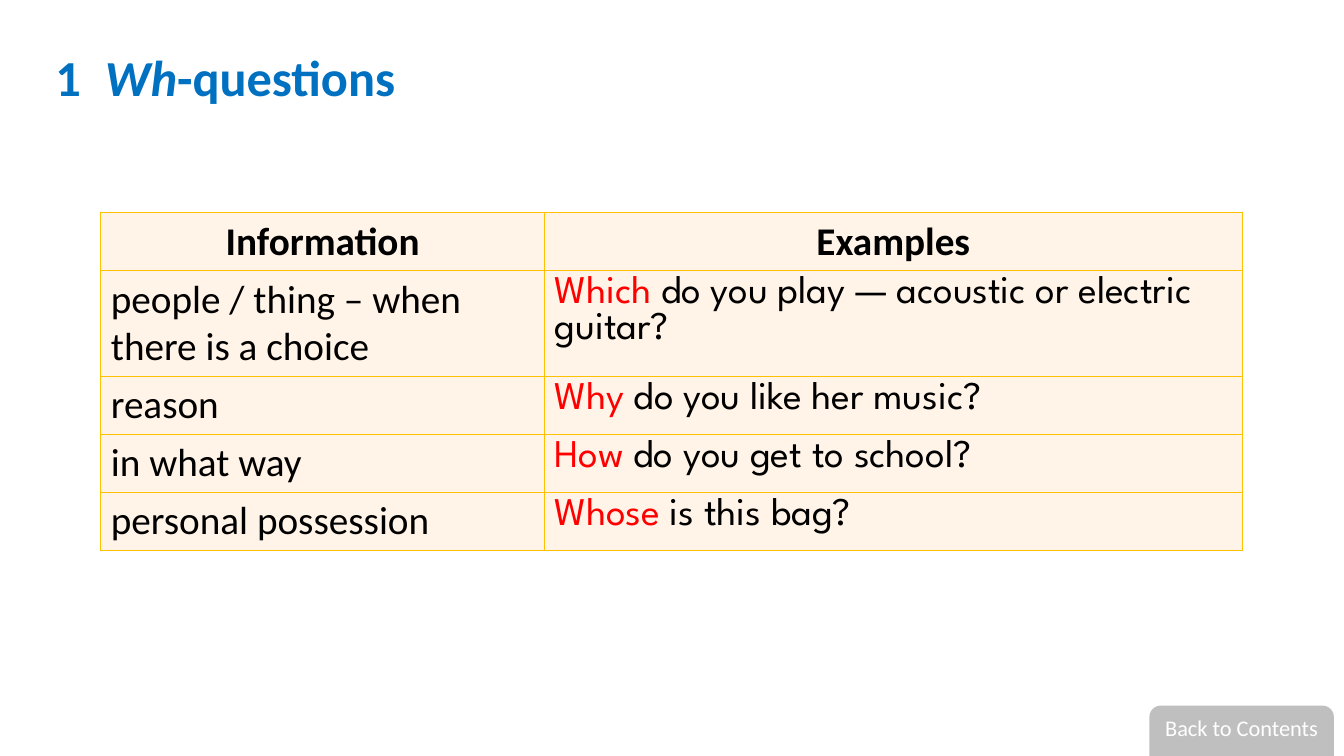
from typing import NamedTuple

from lxml import etree
from pptx import Presentation
from pptx.dml.color import RGBColor
from pptx.enum.shapes import MSO_SHAPE
from pptx.enum.text import MSO_ANCHOR, PP_ALIGN
from pptx.oxml.ns import qn
from pptx.util import Inches, Pt

ROUNDED = MSO_SHAPE.ROUNDED_RECTANGLE
TOP, MIDDLE = MSO_ANCHOR.TOP, MSO_ANCHOR.MIDDLE
LEFT, CENTER = PP_ALIGN.LEFT, PP_ALIGN.CENTER

COLORS = {
    "title": "0070C0",
    "text": "000000",
    "question": "FF0000",
    "cell": "FFF4E7",
    "border": "FFC000",
    "button": "BFBFBF",
    "white": "FFFFFF",
}
BODY_FONT, EXAMPLE_FONT = "Calibri", "League Spartan"
GRID_COLS, GRID_ROWS = 133.3, 75
CELL = Inches(0.1)


class Box(NamedTuple):
    col: float
    row: float
    cols: float
    rows: float


class Question(NamedTuple):
    information: str
    word: str
    rest: str
    rows: float = 5.75


TITLE_BOX = Box(5.5, 5, 117.7, 6.3)
TABLE_BOX = Box(10, 21.1, 113.2, 33.5)
BUTTON_BOX = Box(114, 70, 18.3, 6.8)
TABLE_COLS = (44, 69.2)
HEADER_ROWS = 5.75
HEADERS = ("Information", "Examples")
QUESTIONS = (
    Question("people / thing – when there is a choice", "Which",
             " do you play — acoustic or electric guitar?", 10.5),
    Question("reason", "Why", " do you like her music?"),
    Question("in what way", "How", " do you get to school?"),
    Question("personal possession", "Whose", " is this bag?"),
)


def grid(n: float) -> int:
    return round(n * CELL)


def place(box: Box) -> list[int]:
    return [grid(n) for n in box]


def color(name: str) -> RGBColor:
    return RGBColor.from_string(COLORS[name])


def add_text(p, text: str, *, size: float = 28, font: str = BODY_FONT,
             fill: str = "text", bold: bool = False, italic: bool = False,
             align=LEFT) -> None:
    p.alignment = align
    r = p.add_run()
    r.text = text
    r.font.size = Pt(size)
    r.font.name = font
    r.font.bold = bold
    r.font.italic = italic
    r.font.color.rgb = color(fill)


def format_cell(cell, anchor=TOP) -> None:
    tcPr = cell._tc.get_or_add_tcPr()
    for side in ("lnL", "lnR", "lnT", "lnB"):
        ln = etree.SubElement(tcPr, qn(f"a:{side}"), w=str(Pt(1)))
        line_fill = etree.SubElement(ln, qn("a:solidFill"))
        etree.SubElement(line_fill, qn("a:srgbClr"), val=COLORS["border"])
    cell.fill.solid()
    cell.fill.fore_color.rgb = color("cell")
    cell.vertical_anchor = anchor


def add_title(s) -> None:
    tf = s.shapes.add_textbox(*place(TITLE_BOX)).text_frame
    tf.word_wrap = True
    tf.margin_left = tf.margin_right = tf.margin_top = tf.margin_bottom = 0
    p = tf.paragraphs[0]
    pPr = p._p.get_or_add_pPr()
    pPr.set("marL", str(grid(4.9)))
    pPr.set("indent", str(-grid(4.9)))
    p.line_spacing = Pt(40)
    for text, italic in (("1\t", False), ("Wh", True), ("-questions", False)):
        add_text(p, text, size=36, fill="title", bold=True, italic=italic)


def add_questions(s) -> None:
    table = s.shapes.add_table(len(QUESTIONS) + 1, len(HEADERS),
                               *place(TABLE_BOX)).table
    table.first_row = table.horz_banding = False
    table.rows[0].height = grid(HEADER_ROWS)
    for i, (header, cols) in enumerate(zip(HEADERS, TABLE_COLS)):
        table.columns[i].width = grid(cols)
        cell = table.cell(0, i)
        format_cell(cell, MIDDLE)
        add_text(cell.text_frame.paragraphs[0], header, bold=True, align=CENTER)
    for i, question in enumerate(QUESTIONS, 1):
        table.rows[i].height = grid(question.rows)
        information, example = table.cell(i, 0), table.cell(i, 1)
        format_cell(information)
        format_cell(example)
        add_text(information.text_frame.paragraphs[0], question.information)
        p = example.text_frame.paragraphs[0]
        add_text(p, question.word, font=EXAMPLE_FONT, fill="question")
        add_text(p, question.rest, font=EXAMPLE_FONT)


def add_button(s) -> None:
    sp = s.shapes.add_shape(ROUNDED, *place(BUTTON_BOX))
    sp.shadow.inherit = False
    sp.fill.solid()
    sp.fill.fore_color.rgb = color("button")
    sp.line.fill.background()
    tf = sp.text_frame
    tf.word_wrap = True
    tf.vertical_anchor = TOP
    add_text(tf.paragraphs[0], "Back to Contents", size=16, fill="white",
             align=CENTER)


def main() -> None:
    prs = Presentation()
    prs.slide_width, prs.slide_height = grid(GRID_COLS), grid(GRID_ROWS)
    s = prs.slides.add_slide(prs.slide_layouts[6])
    add_questions(s)
    add_title(s)
    add_button(s)
    prs.save("out.pptx")


if __name__ == "__main__":
    main()
